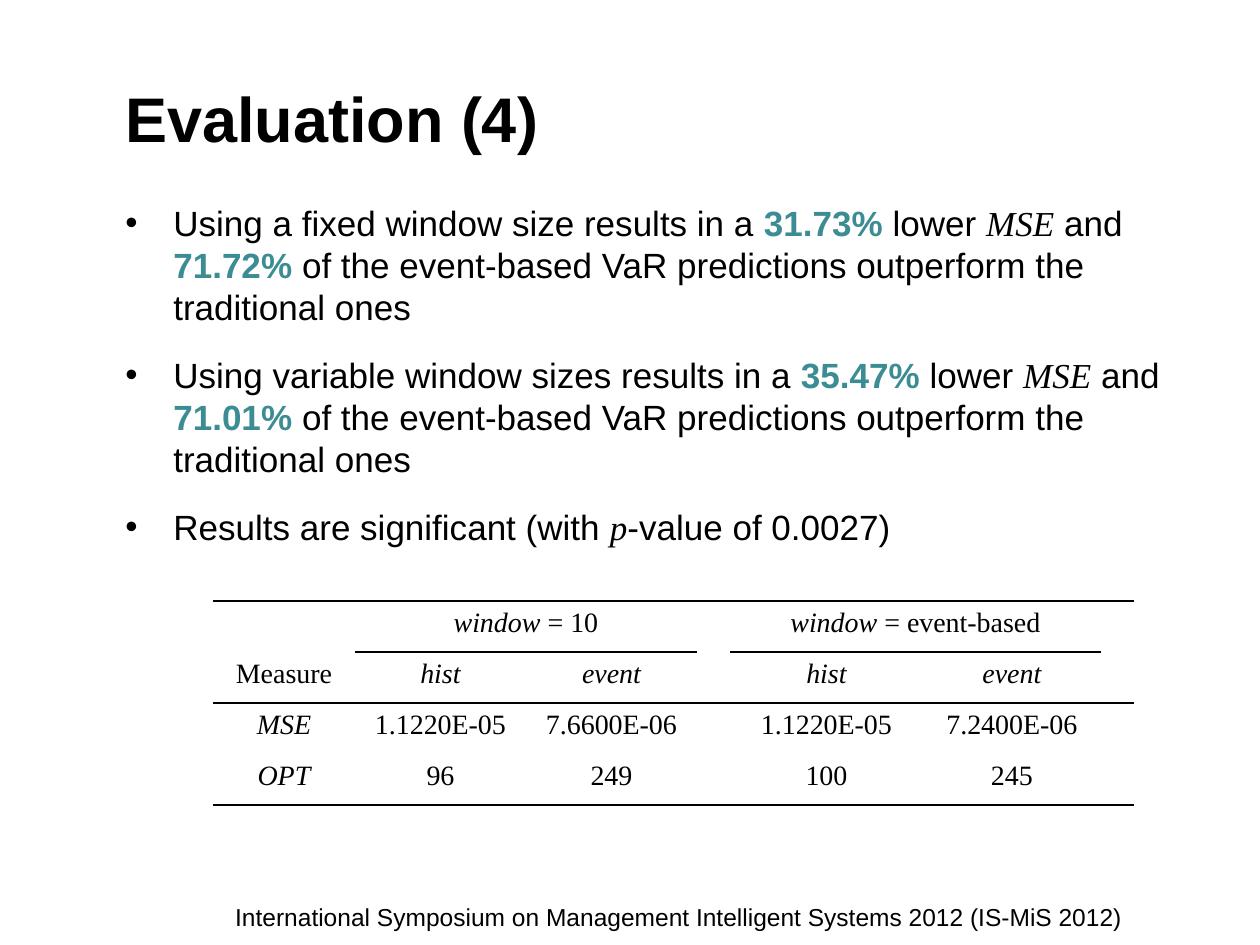
"""Build the "Evaluation (4)" slide with findings and a results table."""
from lxml import etree
from pptx import Presentation, util as u
from pptx.dml.color import RGBColor
from pptx.enum import text as t
from pptx.oxml import ns

PX = 914400 / 126
COLORS = {"ink": "000000", "accent": "3C8C93"}
SANS, SERIF = "Arial", "Times New Roman"
STYLES = {
    "plain": {},
    "strong": {"bold": True, "color": "accent"},
    "math": {"italic": True, "font": SERIF},
}

TITLE = "Evaluation (4)"
FOOTER = "International Symposium on Management Intelligent Systems 2012 (IS-MiS 2012)"
OUTPERFORM = " of the event-based VaR predictions outperform the traditional ones"
WINDOWS = [
    ("Using a fixed window size results in a ", "31.73%", "71.72%"),
    ("Using variable window sizes results in a ", "35.47%", "71.01%"),
]
FINDINGS = [
    [(opening, "plain"), (lower, "strong"), (" lower ", "plain"), ("MSE", "math"),
     (" and ", "plain"), (share, "strong"), (OUTPERFORM, "plain")]
    for opening, lower, share in WINDOWS
] + [[("Results are significant (with ", "plain"), ("p", "math"),
      ("-value of 0.0027)", "plain")]]

COLUMNS = [142, 171, 171, 33, 193, 178, 33]
ROW_HEIGHT = 51
WINDOW = ("window", "math")
ROWS = [
    ["", [WINDOW, (" = 10", "plain")], "", "", [WINDOW, (" = event-based", "plain")], "", ""],
    ["Measure", [("hist", "math")], [("event", "math")], "",
     [("hist", "math")], [("event", "math")], ""],
    [[("MSE", "math")], "1.1220E-05", "7.6600E-06", "", "1.1220E-05", "7.2400E-06", ""],
    [[("OPT", "math")], "96", "249", "", "100", "245", ""],
]
ALL_COLUMNS = set(range(len(COLUMNS)))
GROUPS = [(1, 2), (4, 5)]
RULES = {0: ALL_COLUMNS, 1: {1, 2, 4, 5}, 2: ALL_COLUMNS, 4: ALL_COLUMNS}


def px(value):
    return u.Emu(round(value * PX))


def write(paragraph, content, size=20, font=SANS, bold=False, align=t.PP_ALIGN.LEFT):
    paragraph.alignment = align
    runs = [(content, "plain")] if isinstance(content, str) else content
    for words, style_name in runs:
        style = STYLES[style_name]
        run = paragraph.add_run()
        run.text = words
        run.font.size = u.Pt(size)
        run.font.name = style.get("font", font)
        run.font.bold = style.get("bold", bold)
        run.font.italic = style.get("italic", False)
        run.font.color.rgb = RGBColor.from_string(COLORS[style.get("color", "ink")])


def add_box(slide, left, top, width, height, anchor=t.MSO_ANCHOR.TOP):
    frame = slide.shapes.add_textbox(*map(px, (left, top, width, height))).text_frame
    frame.word_wrap = True
    frame.vertical_anchor = anchor
    return frame


def add_bullet(paragraph, indent):
    properties = paragraph._p.get_or_add_pPr()
    properties.set("marL", str(px(indent)))
    properties.set("indent", str(px(-indent)))
    etree.SubElement(properties, ns.qn("a:buFont")).set("typeface", SANS)
    etree.SubElement(properties, ns.qn("a:buChar")).set("char", "•")


def set_borders(cell, ruled_sides):
    properties = cell._tc.get_or_add_tcPr()
    for side in ("L", "R", "T", "B"):
        line = etree.SubElement(properties, ns.qn(f"a:ln{side}"))
        if side in ruled_sides:
            line.set("w", str(u.Pt(1)))
            fill = etree.SubElement(line, ns.qn("a:solidFill"))
            etree.SubElement(fill, ns.qn("a:srgbClr")).set("val", COLORS["ink"])
        else:
            etree.SubElement(line, ns.qn("a:noFill"))


def add_results(slide, left, top):
    table = slide.shapes.add_table(
        len(ROWS), len(COLUMNS), px(left), px(top),
        px(sum(COLUMNS)), px(ROW_HEIGHT * len(ROWS))).table
    table.first_row = table.horz_banding = False
    for column, width in zip(table.columns, COLUMNS):
        column.width = px(width)
    for first, last in GROUPS:
        table.cell(0, first).merge(table.cell(0, last))
    for i, row in enumerate(ROWS):
        table.rows[i].height = px(ROW_HEIGHT)
        for j, content in enumerate(row):
            cell = table.cell(i, j)
            edges = (("T", i), ("B", i + 1))
            set_borders(cell, [side for side, edge in edges if j in RULES.get(edge, ())])
            cell.fill.background()
            if content:
                write(cell.text_frame.paragraphs[0], content, size=16, font=SERIF,
                      align=t.PP_ALIGN.CENTER)


def main():
    presentation = Presentation()
    presentation.slide_width, presentation.slide_height = px(1260), px(945)
    slide = presentation.slides.add_slide(presentation.slide_layouts[6])

    title = add_box(slide, 113, 38, 1084, 158, t.MSO_ANCHOR.MIDDLE)
    write(title.paragraphs[0], TITLE, size=36, bold=True)

    body = add_box(slide, 113, 195, 1084, 684)
    for i, finding in enumerate(FINDINGS):
        paragraph = body.add_paragraph() if i else body.paragraphs[0]
        add_bullet(paragraph, 48)
        paragraph.line_spacing = u.Pt(24)
        if i:
            paragraph.space_before = u.Pt(15)
        write(paragraph, finding)

    footer = add_box(slide, 108, 896, 1142, 30)
    write(footer.paragraphs[0], FOOTER, size=14, align=t.PP_ALIGN.CENTER)

    add_results(slide, 213, 601)
    presentation.save("out.pptx")


if __name__ == "__main__":
    main()
